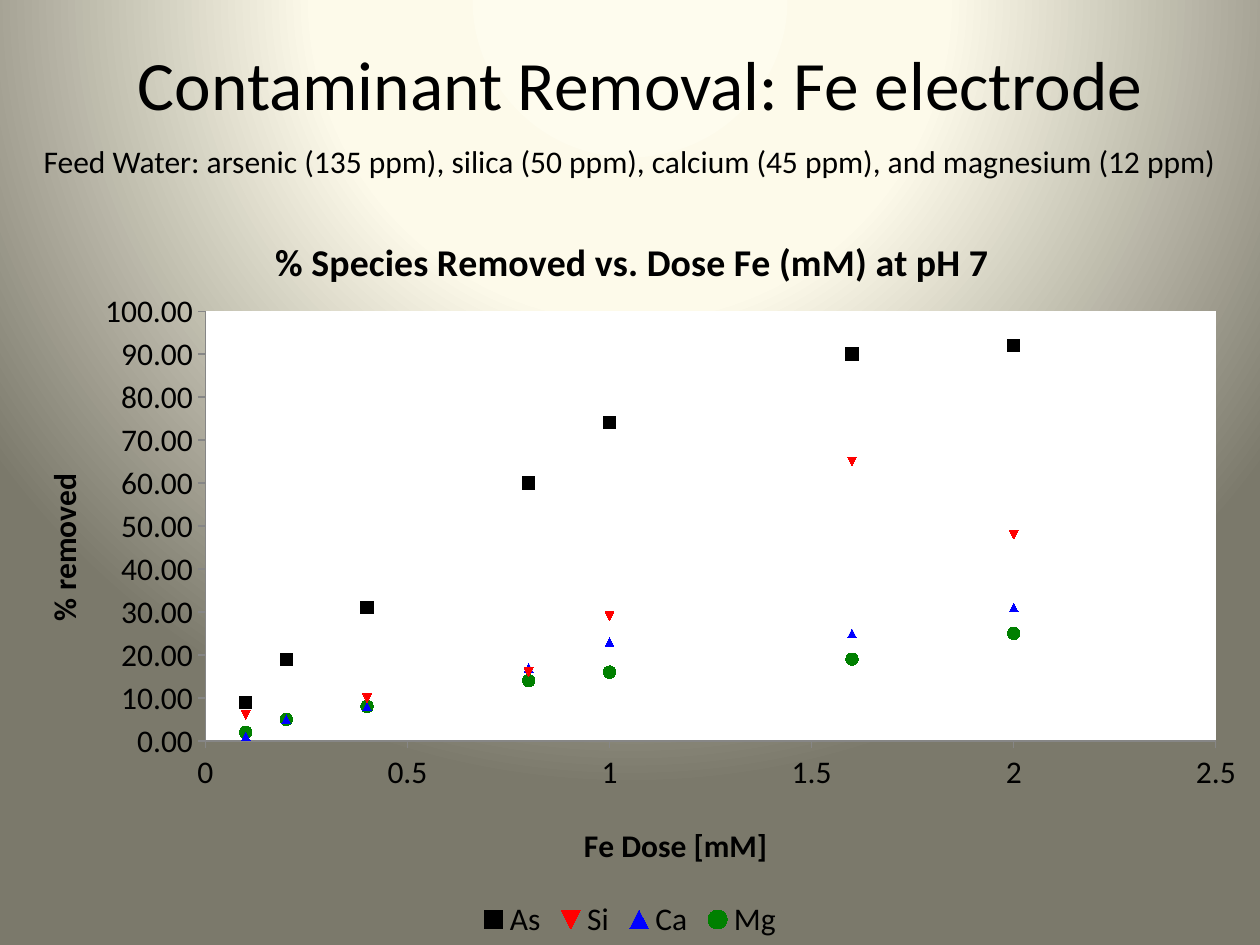
from pptx import Presentation
from pptx.chart.data import XyChartData as XyData
from pptx.dml.color import RGBColor as RGB
from pptx.enum.chart import XL_CHART_TYPE as Kind, XL_LEGEND_POSITION as Place
from pptx.enum.chart import XL_MARKER_STYLE as Mark, XL_TICK_MARK as Tick
from pptx.enum.text import MSO_ANCHOR as Anchor, PP_ALIGN as Align
from pptx.oxml import parse_xml
from pptx.util import Pt

EMU = 914400 / 126
WIDE, HIGH = 1260, 945
TOP = 195
A = "http://schemas.openxmlformats.org/drawingml/2006/main"
C = "http://schemas.openxmlformats.org/drawingml/2006/chart"
P = "http://schemas.openxmlformats.org/presentationml/2006/main"
DOSES = [0.1, 0.2, 0.4, 0.8, 1, 1.6, 2]
SERIES = [
    ("As", "000000", Mark.SQUARE, 7, [9, 19, 31, 60, 74, 90, 92]),
    ("Si", "FF0000", None, 5, [6, None, 10, 16, 29, 65, 48]),
    ("Ca", "0000FF", Mark.TRIANGLE, 5, [1, 5, 8, 17, 23, 25, 31]),
    ("Mg", "008000", Mark.CIRCLE, 7, [2, 5, 8, 14, 16, 19, 25]),
]


def px(*nums):
    return [round(num * EMU) for num in nums]


def color(code):
    return RGB.from_string(code)


def layout(left, top, wide=None, high=None):
    parts = [("x", left / WIDE), ("y", (top - TOP) / (HIGH - TOP))]
    inner = ""
    if wide:
        parts += [("w", wide / WIDE), ("h", high / (HIGH - TOP))]
        inner = '<c:layoutTarget val="inner"/>'
    modes = "".join(f'<c:{key}Mode val="edge"/>' for key in "xy")
    sizes = "".join(f'<c:{key} val="{num:.3f}"/>' for key, num in parts)
    return parse_xml(f'<c:layout xmlns:c="{C}"><c:manualLayout>{inner}{modes}{sizes}'
                     '</c:manualLayout></c:layout>')


class Deck:
    font = "Calibri"
    ink = "000000"

    def __init__(self):
        self.file = Presentation()
        self.file.slide_width, self.file.slide_height = px(WIDE, HIGH)
        self.slide = self.file.slides.add_slide(self.file.slide_layouts[5])

    def style(self, font, size, bold=False):
        font.name, font.size, font.bold = self.font, Pt(size), bold
        font.color.rgb = color(self.ink)

    def glow(self, stops):
        marks = "".join(f'<a:gs pos="{pos}000"><a:srgbClr val="{code}"/></a:gs>'
                        for pos, code in stops)
        back = parse_xml(
            f'<p:bg xmlns:p="{P}" xmlns:a="{A}"><p:bgPr><a:gradFill rotWithShape="1">'
            f'<a:gsLst>{marks}</a:gsLst><a:path path="circle">'
            '<a:fillToRect l="50000" t="-80000" r="50000" b="180000"/></a:path>'
            '</a:gradFill><a:effectLst/></p:bgPr></p:bg>')
        self.slide.element.cSld.insert(0, back)

    def words(self, shape, text, size):
        frame = shape.text_frame
        frame.text = text
        para = frame.paragraphs[0]
        para.alignment = Align.CENTER
        self.style(para.font, size)
        return frame

    def title(self, text, box, size, foot):
        shape = self.slide.shapes.title
        shape.left, shape.top, shape.width, shape.height = px(*box)
        frame = self.words(shape, text, size)
        frame.vertical_anchor = Anchor.BOTTOM
        frame.margin_bottom, = px(foot)

    def note(self, text, box, size):
        shape = self.slide.shapes.add_textbox(*px(*box))
        self.words(shape, text, size).word_wrap = False

    def label(self, title, text, size, left, top):
        frame = title.text_frame
        frame.text = text
        self.style(frame.paragraphs[0].font, size, True)
        node = title._element
        for old in node.findall(f"{{{C}}}layout"):
            node.remove(old)
        node.find(f"{{{C}}}tx").addnext(layout(left, top))

    def axis(self, axis, top, step, form):
        axis.minimum_scale, axis.maximum_scale, axis.major_unit = 0, top, step
        axis.has_major_gridlines = False
        axis.major_tick_mark = Tick.OUTSIDE
        axis.tick_labels.number_format = form
        axis.tick_labels.number_format_is_linked = False
        axis.format.line.color.rgb = color("868686")

    def scatter(self, box, plot):
        data = XyData()
        for name, _, _, _, vals in SERIES:
            row = data.add_series(name)
            for dose, val in zip(DOSES, vals):
                if val is not None:
                    row.add_data_point(dose, val)
        chart = self.slide.shapes.add_chart(Kind.XY_SCATTER, *px(*box), data).chart
        self.style(chart.font, 18)
        for row, (_, code, mark, size, _) in zip(chart.plots[0].series, SERIES):
            row.format.line.fill.background()
            row.smooth = False
            row.marker.size = size
            if mark:
                row.marker.style = mark
            look = row.marker.format
            look.fill.solid()
            look.fill.fore_color.rgb = color(code)
            look.line.color.rgb = color(code)
        chart.plots[0].vary_by_categories = False
        across, up = chart.category_axis, chart.value_axis
        self.axis(across, 2.5, 0.5, "General")
        self.axis(up, 100, 10, "0.00")
        self.label(chart.chart_title, "% Species Removed vs. Dose Fe (mM) at pH 7",
                   21.6, 268, 228)
        self.label(across.axis_title, "Fe Dose [mM]", 18, 578, 818)
        self.label(up.axis_title, "% removed", 18, 36, 468)
        chart.has_legend = True
        chart.legend.position = Place.BOTTOM
        chart.legend.include_in_layout = False
        area = chart._chartSpace.chart.plotArea
        for old in area.findall(f"{{{C}}}layout"):
            area.remove(old)
        area.insert(0, layout(*plot))
        area.append(parse_xml(
            f'<c:spPr xmlns:c="{C}" xmlns:a="{A}"><a:solidFill>'
            '<a:srgbClr val="FFFFFF"/></a:solidFill><a:ln><a:noFill/></a:ln></c:spPr>'))


def main():
    deck = Deck()
    deck.glow([(0, "FEFCEE"), (40, "FDFAEA"), (100, "7B796B")])
    deck.title("Contaminant Removal: Fe electrode", (84, 73, 1113, 94), 39.6, 43)
    deck.scatter((0, TOP, WIDE, HIGH - TOP), (205, 311, 1010, 430))
    deck.note("Feed Water: arsenic (135 ppm), silica (50 ppm), calcium (45 ppm), "
              "and magnesium (12 ppm)", (5, 136, 1250, 50), 18)
    deck.file.save("out.pptx")


if __name__ == "__main__":
    main()
